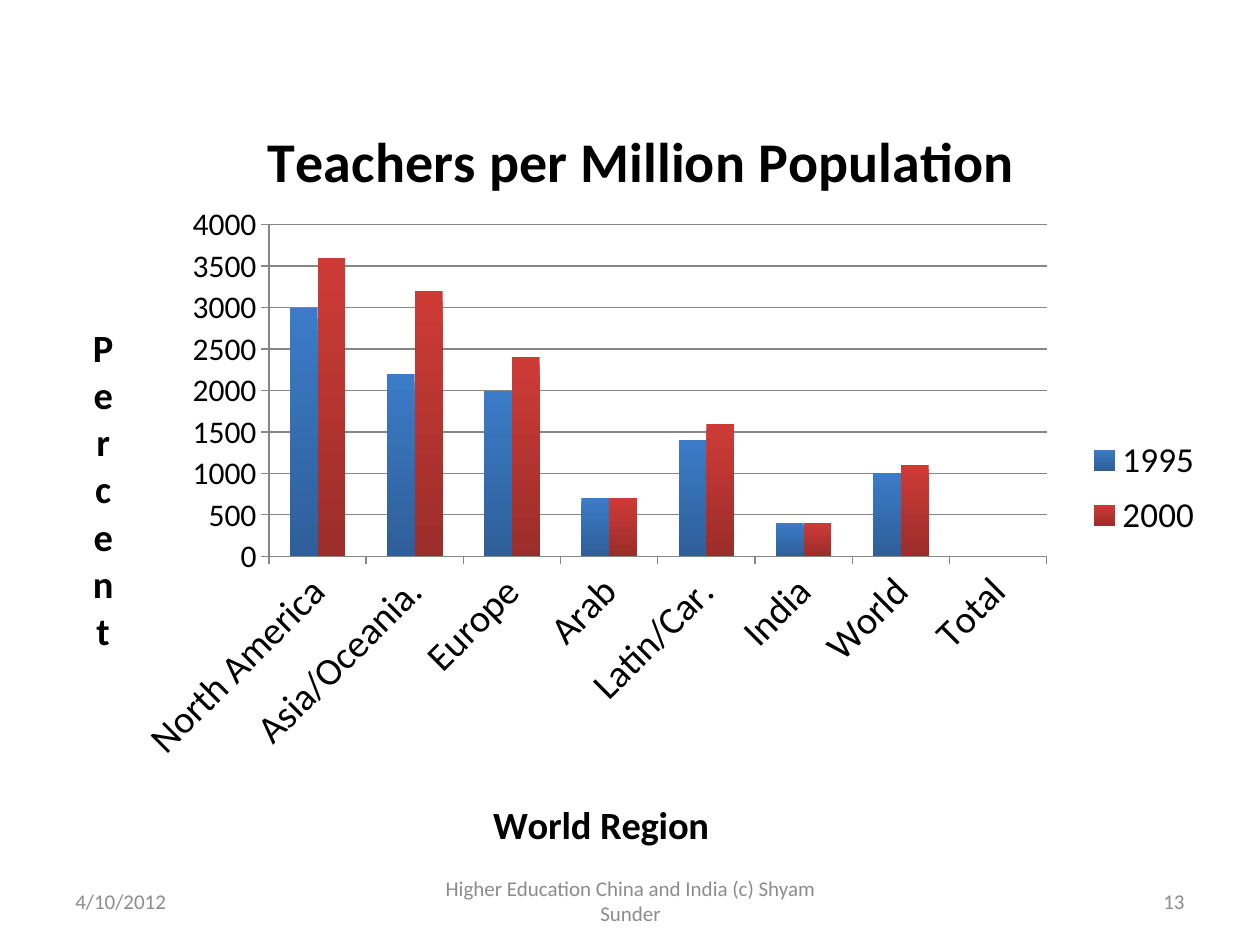
"""Builds a slide with a column chart of teachers per million population by region."""
from lxml.etree import SubElement
from pptx import Presentation
from pptx.chart.data import CategoryChartData
from pptx.dml.color import RGBColor
from pptx.enum.chart import XL_CHART_TYPE, XL_LEGEND_POSITION, XL_TICK_MARK
from pptx.enum.text import MSO_ANCHOR, PP_ALIGN
from pptx.oxml import parse_xml
from pptx.oxml.ns import nsdecls, qn
from pptx.util import Inches, Pt

FONT = "Calibri"
BLACK = RGBColor(0, 0, 0)
GRAY = RGBColor(0x8C, 0x8C, 0x8C)
LINE = RGBColor(0x86, 0x86, 0x86)
BLUES = RGBColor(0x3C, 0x7B, 0xC7), RGBColor(0x2E, 0x5F, 0x99)
REDS = RGBColor(0xCE, 0x3B, 0x37), RGBColor(0x9B, 0x2D, 0x2A)


def write(frame, text, size=12, color=GRAY, bold=False, align=PP_ALIGN.LEFT):
    frame.text = text
    para = frame.paragraphs[0]
    para.alignment = align
    font = para.runs[0].font
    font.name, font.size, font.bold = FONT, Pt(size), bold
    font.color.rgb = color


def place(part, index, inner=False, **share):
    for old in part.findall(qn("c:layout")):
        part.remove(old)
    layout = parse_xml(f"<c:layout {nsdecls('c')}/>")
    manual = SubElement(layout, qn("c:manualLayout"))
    if inner:
        SubElement(manual, qn("c:layoutTarget")).set("val", "inner")
    for key in ("x", "y"):
        SubElement(manual, qn(f"c:{key}Mode")).set("val", "edge")
    for key, value in share.items():
        SubElement(manual, qn(f"c:{key}")).set("val", str(value))
    part.insert(index, layout)


deck = Presentation()
deck.slide_width, deck.slide_height = Inches(10), Inches(7.5)
slide = deck.slides.add_slide(deck.slide_layouts[6])

data = CategoryChartData()
data.categories = ["North America", "Asia/Oceania.", "Europe", "Arab",
                   "Latin/Car.", "India", "World", "Total"]
data.add_series("1995", [3000, 2200, 2000, 700, 1400, 400, 1000, None])
data.add_series("2000", [3600, 3200, 2400, 700, 1600, 400, 1100, None])
chart = slide.shapes.add_chart(
    XL_CHART_TYPE.COLUMN_CLUSTERED, Inches(0.5), Inches(0.5),
    Inches(9.08), Inches(6.42), data).chart
chart.font.name, chart.font.size = FONT, Pt(10)
chart.font.color.rgb = BLACK

plot = chart.plots[0]
plot.gap_width, plot.overlap, plot.vary_by_categories = 150, 0, False
for series, shades in zip(plot.series, (BLUES, REDS)):
    fill = series.format.fill
    fill.gradient()
    fill.gradient_angle = 270
    for stop, shade in zip(fill.gradient_stops, shades):
        stop.color.rgb = shade

across, up = chart.category_axis, chart.value_axis
up.minimum_scale, up.maximum_scale, up.major_unit = 0, 4000, 500
up.has_major_gridlines = True
up.major_gridlines.format.line.color.rgb = LINE
for axis, size in ((across, 22), (up, 18)):
    axis.major_tick_mark = XL_TICK_MARK.OUTSIDE
    axis.minor_tick_mark = XL_TICK_MARK.NONE
    axis.format.line.color.rgb = LINE
    font = axis.tick_labels.font
    font.name, font.size = FONT, Pt(size)
    font.color.rgb = BLACK

chart.has_legend = True
legend = chart.legend
legend.position = XL_LEGEND_POSITION.RIGHT
legend.include_in_layout = False
legend.font.name, legend.font.size = FONT, Pt(20)
legend.font.color.rgb = BLACK

chart.has_title = True
for head, text, size in ((chart.chart_title, "Teachers per Million Population", 32),
                         (across.axis_title, "World Region", 22),
                         (up.axis_title, "Percent", 22)):
    write(head.text_frame, text, size=size, color=BLACK, bold=True,
          align=PP_ALIGN.CENTER)

root = chart._chartSpace
root.xpath(".//c:catAx/c:txPr/a:bodyPr")[0].set("rot", "-2700000")
turn = root.xpath(".//c:valAx/c:title//a:bodyPr")[0]
turn.set("rot", "0")
turn.set("vert", "wordArtVert")

place(root.xpath("c:chart/c:title")[0], 1, x=0.17, y=0.06)
place(root.xpath(".//c:catAx/c:title")[0], 1, x=0.37, y=0.9)
place(root.xpath(".//c:valAx/c:title")[0], 1, x=0.02, y=0.31)
place(root.xpath(".//c:legend")[0], 1, x=0.89, y=0.45, w=0.11, h=0.15)
place(root.xpath(".//c:plotArea")[0], 0, inner=True, x=0.18, y=0.2, w=0.68, h=0.41)

for left, width, text, align in (
        (0.5, 2.33, "4/10/2012", PP_ALIGN.LEFT),
        (3.42, 3.17, "Higher Education China and India (c) Shyam Sunder", PP_ALIGN.CENTER),
        (7.17, 2.33, "13", PP_ALIGN.RIGHT)):
    frame = slide.shapes.add_textbox(
        Inches(left), Inches(6.95), Inches(width), Inches(0.4)).text_frame
    frame.word_wrap = True
    frame.vertical_anchor = MSO_ANCHOR.MIDDLE
    write(frame, text, align=align)

deck.save("out.pptx")
